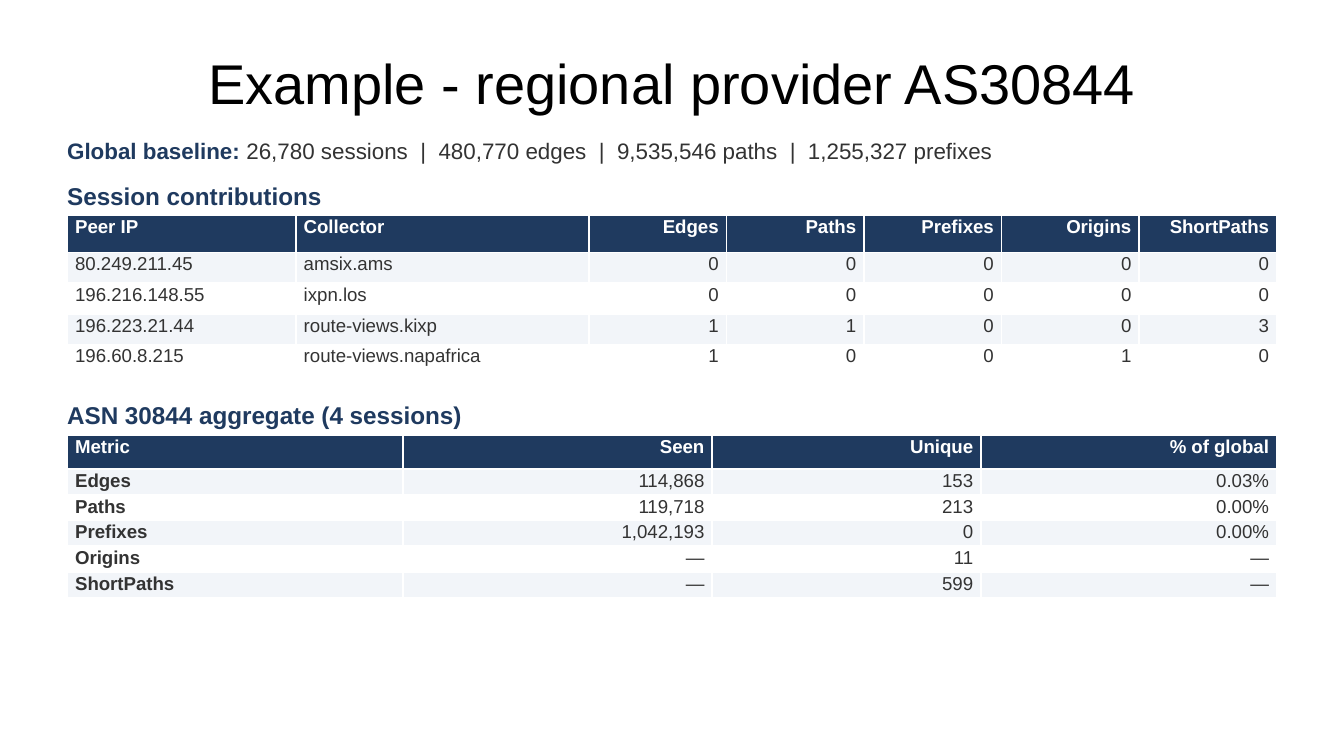
"""Build a slide that compares the session and aggregate figures of AS30844."""
from dataclasses import dataclass

from pptx import Presentation
from pptx.dml.color import RGBColor
from pptx.enum.text import MSO_ANCHOR, PP_ALIGN
from pptx.util import Cm, Pt

NAVY, GREY, PALE, WHITE, BLACK = "1F3A5F", "333333", "F2F5F9", "FFFFFF", "000000"
LEFT, WIDTH = 1.27, 22.86


@dataclass
class Label:
    """A text box made of (text, colour, bold) runs."""
    top: float
    high: float
    size: float
    runs: list[tuple[str, str, bool]]
    title: bool = False


@dataclass
class Grid:
    """A table with a header row, text columns first and numbers after."""
    top: float
    cols: list[float]
    head: float
    row: float
    words: int
    bold: bool
    cells: list[list[str]]


def paint(hue: str) -> RGBColor:
    """Turn a hex string into a colour."""
    return RGBColor.from_string(hue)


def style(run, size: float, hue: str, bold: bool) -> None:
    """Format one run."""
    font = run.font
    font.name, font.size, font.bold = "Arial", Pt(size), bold
    font.color.rgb = paint(hue)


def add_label(slide, label: Label) -> None:
    """Draw one text box."""
    box = slide.shapes.add_textbox(Cm(LEFT), Cm(label.top), Cm(WIDTH), Cm(label.high))
    frame = box.text_frame
    frame.word_wrap = True
    frame.margin_left = frame.margin_top = frame.margin_right = frame.margin_bottom = 0
    line = frame.paragraphs[0]
    if label.title:
        frame.vertical_anchor = MSO_ANCHOR.MIDDLE
        line.alignment = PP_ALIGN.CENTER
    for text, hue, bold in label.runs:
        run = line.add_run()
        run.text = text
        style(run, label.size, hue, bold)


def add_grid(slide, grid: Grid) -> None:
    """Draw one table."""
    count = len(grid.cells)
    high = grid.head + grid.row * (count - 1)
    table = slide.shapes.add_table(
        count, len(grid.cols), Cm(LEFT), Cm(grid.top), Cm(WIDTH), Cm(high)
    ).table
    for col, wide in zip(table.columns, grid.cols):
        col.width = Cm(wide)
    for r, texts in enumerate(grid.cells):
        table.rows[r].height = Cm(grid.row if r else grid.head)
        back = NAVY if r == 0 else PALE if r % 2 else WHITE
        for c, text in enumerate(texts):
            cell = table.cell(r, c)
            cell.margin_left = cell.margin_right = Cm(0.15)
            cell.margin_top = cell.margin_bottom = Cm(0.03)
            cell.fill.solid()
            cell.fill.fore_color.rgb = paint(back)
            line = cell.text_frame.paragraphs[0]
            line.text = text
            line.alignment = PP_ALIGN.LEFT if c < grid.words else PP_ALIGN.RIGHT
            bold = r == 0 or (grid.bold and c == 0)
            style(line.runs[0], 10, GREY if r else WHITE, bold)


LABELS = [
    Label(0.58, 1.96, 30, [("Example - regional provider AS30844", BLACK, False)], True),
    Label(2.59, 0.71, 12, [
        ("Global baseline: ", NAVY, True),
        ("26,780 sessions  |  480,770 edges  |  9,535,546 paths  |  1,255,327 prefixes",
         GREY, False),
    ]),
    Label(3.43, 0.61, 13, [("Session contributions", NAVY, True)]),
    Label(7.57, 0.61, 13, [("ASN 30844 aggregate (4 sessions)", NAVY, True)]),
]

GRIDS = [
    Grid(4.06, [4.32, 5.54] + [2.6] * 5, 0.71, 0.58, 2, False, [
        ["Peer IP", "Collector", "Edges", "Paths", "Prefixes", "Origins", "ShortPaths"],
        ["80.249.211.45", "amsix.ams", "0", "0", "0", "0", "0"],
        ["196.216.148.55", "ixpn.los", "0", "0", "0", "0", "0"],
        ["196.223.21.44", "route-views.kixp", "1", "1", "0", "0", "3"],
        ["196.60.8.215", "route-views.napafrica", "1", "0", "0", "1", "0"],
    ]),
    Grid(8.23, [6.35, 5.84, 5.08, 5.59], 0.64, 0.47, 1, True, [
        ["Metric", "Seen", "Unique", "% of global"],
        ["Edges", "114,868", "153", "0.03%"],
        ["Paths", "119,718", "213", "0.00%"],
        ["Prefixes", "1,042,193", "0", "0.00%"],
        ["Origins", "—", "11", "—"],
        ["ShortPaths", "—", "599", "—"],
    ]),
]


def main() -> None:
    """Build and save the deck."""
    deck = Presentation()
    deck.slide_width, deck.slide_height = Cm(25.4), Cm(14.29)
    slide = deck.slides.add_slide(deck.slide_layouts[6])
    for label in LABELS:
        add_label(slide, label)
    for grid in GRIDS:
        add_grid(slide, grid)
    deck.save("out.pptx")


if __name__ == "__main__":
    main()
